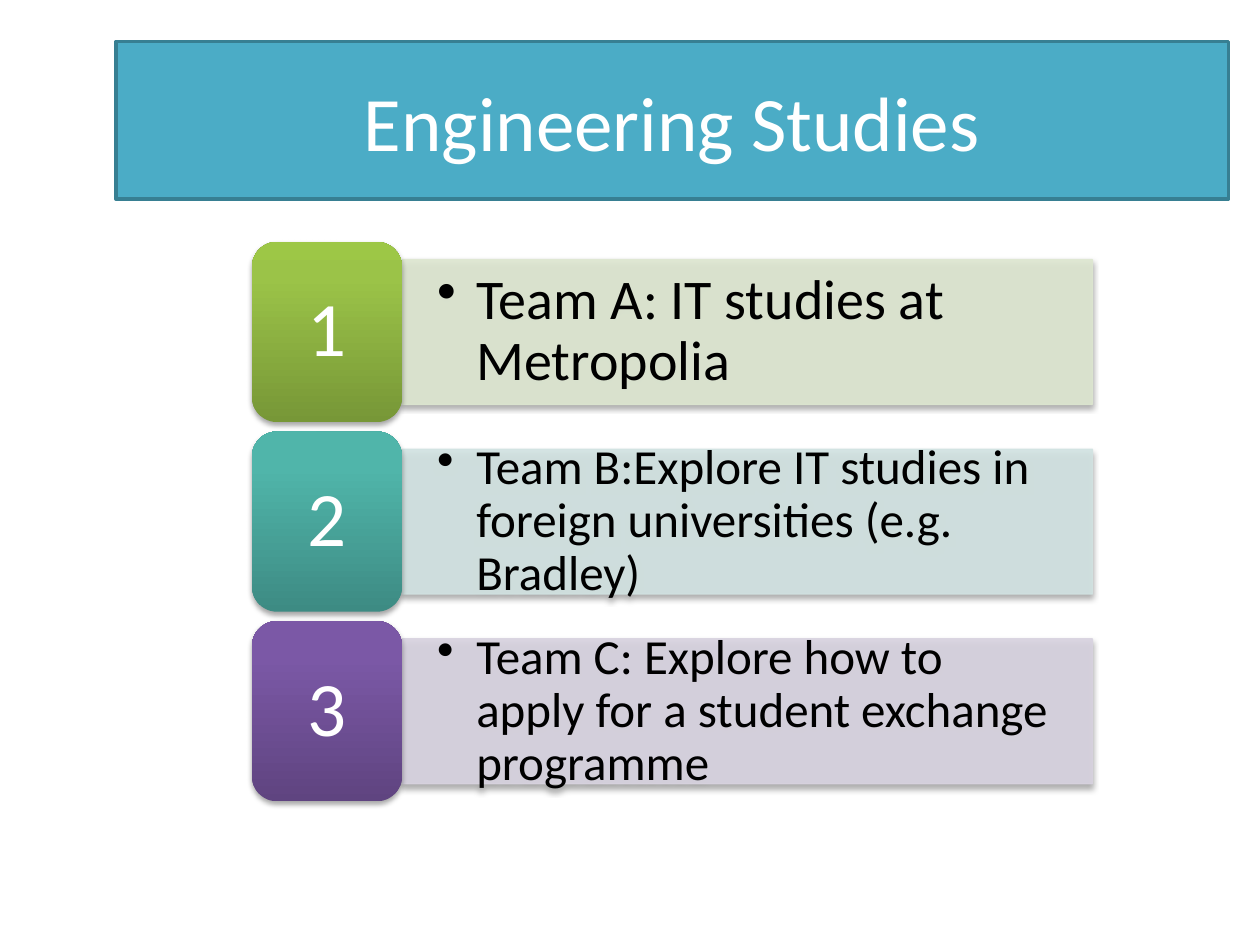
from dataclasses import dataclass
from copy import deepcopy

from lxml.etree import SubElement
from pptx import Presentation
from pptx.dml.color import RGBColor
from pptx.enum.shapes import MSO_SHAPE
from pptx.enum.text import MSO_ANCHOR, PP_ALIGN
from pptx.oxml.ns import qn
from pptx.util import Inches, Pt

FONT = "Calibri"
WHITE = RGBColor(0xFF, 0xFF, 0xFF)
BLACK = RGBColor(0x00, 0x00, 0x00)
TITLE_FILL = RGBColor(0x4B, 0xAC, 0xC6)
TITLE_LINE = RGBColor(0x37, 0x7F, 0x92)

# Row grid in inches: a numbered tile with a panel centred beside it
TILE_LEFT, FIRST_TOP, ROW_PITCH = 2, 1.92, 1.505
TILE_WIDTH, TILE_HEIGHT = 1.19, 1.43
PANEL_WIDTH, PANEL_HEIGHT = 5.48, 1.15
BULLET_INDENT = Inches(0.31)
PANEL_OPACITY = 90


@dataclass
class Team:
    text: str
    size: int
    panel: RGBColor
    gradient: tuple[RGBColor, RGBColor, RGBColor]  # bottom to top


TEAMS = [
    Team("Team A: IT studies at Metropolia", 32, RGBColor(0xDE, 0xE7, 0xD1),
         (RGBColor(0x77, 0x97, 0x37), RGBColor(0x9B, 0xC3, 0x48), RGBColor(0x9D, 0xC7, 0x46))),
    Team("Team B:Explore IT studies in foreign universities (e.g. Bradley)", 28,
         RGBColor(0xD2, 0xE3, 0xE2),
         (RGBColor(0x3D, 0x8B, 0x83), RGBColor(0x50, 0xB5, 0xAA), RGBColor(0x4E, 0xB8, 0xAC))),
    Team("Team C: Explore how to apply for a student exchange programme", 28,
         RGBColor(0xD8, 0xD3, 0xE0),
         (RGBColor(0x5F, 0x44, 0x80), RGBColor(0x7B, 0x58, 0xA6), RGBColor(0x7C, 0x57, 0xA8))),
]


def add_box(slide, kind: MSO_SHAPE, left: float, top: float, width: float, height: float):
    shape = slide.shapes.add_shape(
        kind, Inches(left), Inches(top), Inches(width), Inches(height))
    shape.shadow.inherit = False
    return shape


def set_text(shape, text: str, size: int, color: RGBColor, alignment: PP_ALIGN,
             inset: float = 0.1, line_spacing: float = 0.9, bullet: bool = False) -> None:
    """Write one paragraph; the side insets are twice the top and bottom ones."""
    frame = shape.text_frame
    frame.word_wrap = True
    frame.vertical_anchor = MSO_ANCHOR.MIDDLE
    frame.margin_left = frame.margin_right = Inches(inset * 2)
    frame.margin_top = frame.margin_bottom = Inches(inset)
    paragraph = frame.paragraphs[0]
    paragraph.text = text
    paragraph.alignment = alignment
    paragraph.line_spacing = line_spacing
    if bullet:
        properties = paragraph._p.get_or_add_pPr()
        properties.set("marL", str(BULLET_INDENT))
        properties.set("indent", str(-BULLET_INDENT))
        SubElement(properties, qn("a:buChar"), char="•")
    font = paragraph.font
    font.name, font.size, font.color.rgb = FONT, Pt(size), color


def add_shadow(shape) -> None:
    effects = shape._element.spPr.find(qn("a:effectLst"))
    shadow = SubElement(effects, qn("a:outerShdw"), blurRad=str(Pt(3.1)),
                        dist=str(Pt(1.8)), dir="5400000", rotWithShape="0")
    color = SubElement(shadow, qn("a:srgbClr"), val=str(BLACK))
    SubElement(color, qn("a:alpha"), val="35000")


def add_panel(slide, top: float, team: Team) -> None:
    panel = add_box(slide, MSO_SHAPE.RECTANGLE, TILE_LEFT + TILE_WIDTH,
                    top + (TILE_HEIGHT - PANEL_HEIGHT) / 2, PANEL_WIDTH, PANEL_HEIGHT)
    panel.fill.solid()
    panel.fill.fore_color.rgb = team.panel
    panel.line.color.rgb = team.panel
    panel.line.width = Pt(0.75)
    for color in panel._element.spPr.iter(qn("a:srgbClr")):
        SubElement(color, qn("a:alpha"), val=str(PANEL_OPACITY * 1000))
    add_shadow(panel)
    set_text(panel, team.text, team.size, BLACK, PP_ALIGN.LEFT, inset=0.14, bullet=True)


def add_tile(slide, top: float, number: int, team: Team) -> None:
    tile = add_box(slide, MSO_SHAPE.ROUNDED_RECTANGLE, TILE_LEFT, top, TILE_WIDTH, TILE_HEIGHT)
    tile.line.fill.background()
    tile.fill.gradient()
    tile.fill.gradient_angle = 90
    # The default gradient has two stops; a third is needed
    stop_list = tile._element.spPr.find(".//" + qn("a:gsLst"))
    stop_list.append(deepcopy(stop_list[-1]))
    for stop, position, color in zip(tile.fill.gradient_stops, (0, 0.8, 1), team.gradient):
        stop.position = position
        stop.color.rgb = color
    add_shadow(tile)
    set_text(tile, str(number), 44, WHITE, PP_ALIGN.CENTER, inset=0.09)


def main() -> None:
    presentation = Presentation()
    presentation.slide_width, presentation.slide_height = Inches(10), Inches(7.5)
    slide = presentation.slides.add_slide(presentation.slide_layouts[6])

    # Numbered team rows
    for index, team in enumerate(TEAMS):
        top = FIRST_TOP + index * ROW_PITCH
        add_panel(slide, top, team)
        add_tile(slide, top, index + 1, team)

    # Title banner
    banner = add_box(slide, MSO_SHAPE.RECTANGLE, 0.92, 0.33, 8.83, 1.25)
    banner.fill.solid()
    banner.fill.fore_color.rgb = TITLE_FILL
    banner.line.color.rgb = TITLE_LINE
    banner.line.width = Pt(2)
    set_text(banner, "Engineering Studies", 44, WHITE, PP_ALIGN.CENTER,
             inset=0.05, line_spacing=1.0)

    presentation.save("out.pptx")


if __name__ == "__main__":
    main()
